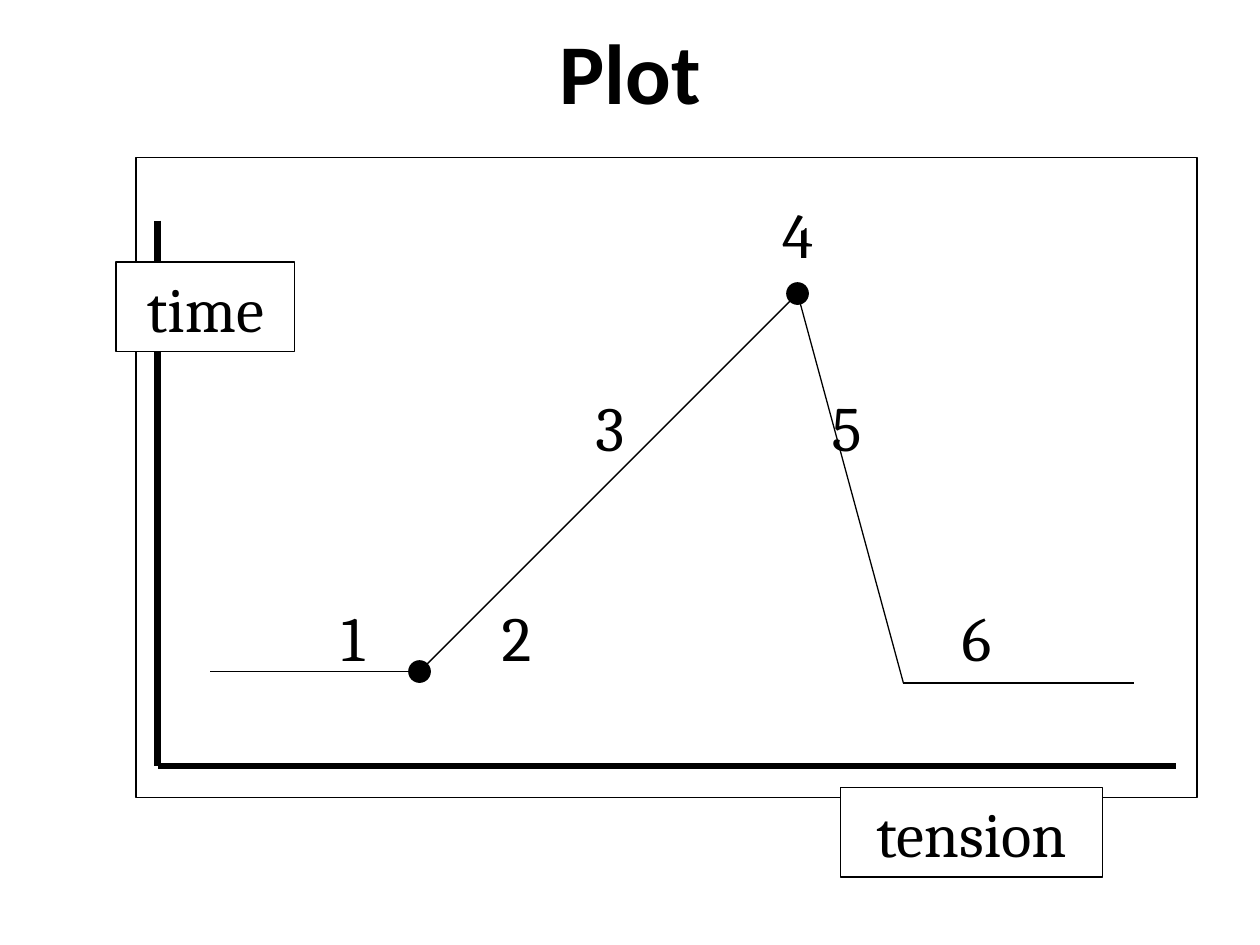
from typing import NamedTuple

import pptx
import pptx.dml.color
import pptx.enum.shapes
import pptx.enum.text
import pptx.oxml.ns
import pptx.util
from lxml import etree

Inches = pptx.util.Inches
Pt = pptx.util.Pt
MSO_SHAPE = pptx.enum.shapes.MSO_SHAPE
ANCHOR = pptx.enum.text.MSO_ANCHOR
INK = "000000"
PAPER = "FFFFFF"


class Point(NamedTuple):
    x: float
    y: float


class Segment(NamedTuple):
    start: Point
    end: Point
    width: float = 0.75


class Number(NamedTuple):
    text: str
    center: Point


class Label(NamedTuple):
    text: str
    left: float
    top: float
    width: float
    height: float = 0.71


def rgb(color: str):
    return pptx.dml.color.RGBColor.from_string(color)


def write(sp, text: str, font: str, size: float, bold: bool = False) -> None:
    tf = sp.text_frame
    tf.word_wrap = True
    tf.vertical_anchor = ANCHOR.MIDDLE
    tf.margin_left = tf.margin_right = tf.margin_top = tf.margin_bottom = 0
    p = tf.paragraphs[0]
    p.alignment = pptx.enum.text.PP_ALIGN.CENTER
    r = p.add_run()
    r.text = text
    r.font.name = font
    r.font.size = Pt(size)
    r.font.bold = bold
    r.font.color.rgb = rgb(INK)


def draw_segment(s, seg: Segment) -> None:
    line = s.shapes.add_connector(
        pptx.enum.shapes.MSO_CONNECTOR.STRAIGHT,
        *(Inches(v) for v in (*seg.start, *seg.end)))
    line.line.color.rgb = rgb(INK)
    line.line.width = Pt(seg.width)
    sp_pr = line._element.spPr
    etree.SubElement(sp_pr, pptx.oxml.ns.qn("a:effectLst"))


def draw_shape(s, kind, left: float, top: float, width: float, height: float,
               fill: str = ""):
    sp = s.shapes.add_shape(kind, *(Inches(v) for v in (left, top, width, height)))
    sp.shadow.inherit = False
    if fill:
        sp.fill.solid()
        sp.fill.fore_color.rgb = rgb(fill)
    else:
        sp.fill.background()
    sp.line.color.rgb = rgb(INK)
    sp.line.width = Pt(0.75)
    return sp


def draw_dot(s, center: Point, size: float = 0.17) -> None:
    draw_shape(s, MSO_SHAPE.OVAL, center.x - size / 2, center.y - size / 2,
               size, size, INK)


def draw_number(s, number: Number, width: float = 0.5, height: float = 0.6) -> None:
    x, y = number.center
    sp = s.shapes.add_textbox(Inches(x - width / 2), Inches(y - height / 2),
                              Inches(width), Inches(height))
    write(sp, number.text, "Cambria", 36)


def draw_label(s, label: Label) -> None:
    sp = draw_shape(s, MSO_SHAPE.RECTANGLE, label.left, label.top,
                    label.width, label.height, PAPER)
    write(sp, label.text, "Cambria", 36)


def main() -> None:
    prs = pptx.Presentation()
    prs.slide_width, prs.slide_height = Inches(10), Inches(7.5)
    s = prs.slides.add_slide(prs.slide_layouts[5])

    title = s.shapes.title
    title.left, title.top = Inches(0.5), Inches(0.15)
    title.width, title.height = Inches(9), Inches(0.82)
    write(title, "Plot", "Calibri", 48.6, True)

    start, rise, climax = Point(1.67, 5.33), Point(3.33, 5.33), Point(6.33, 2.33)
    fall, end = Point(7.17, 5.42), Point(9, 5.42)
    curve = [start, rise, climax, fall, end]
    for a, b in zip(curve, curve[1:]):
        draw_segment(s, Segment(a, b))

    draw_shape(s, MSO_SHAPE.RECTANGLE, 1.08, 1.25, 8.42, 5.08)
    numbers = [
        Number("1", Point(2.8, 5.05)),
        Number("2", Point(4.1, 5.05)),
        Number("3", Point(4.84, 3.38)),
        Number("4", Point(6.33, 1.85)),
        Number("5", Point(6.72, 3.38)),
        Number("6", Point(7.75, 5.05)),
    ]
    for number in numbers:
        draw_number(s, number)
    for center in (rise, climax):
        draw_dot(s, center)

    corner = Point(1.25, 6.08)
    draw_segment(s, Segment(Point(1.25, 1.75), corner, 4.25))
    draw_segment(s, Segment(corner, Point(9.33, 6.08), 3.75))
    for label in (Label("time", 0.92, 2.08, 1.42), Label("tension", 6.67, 6.25, 2.08)):
        draw_label(s, label)

    prs.save("out.pptx")


if __name__ == "__main__":
    main()
